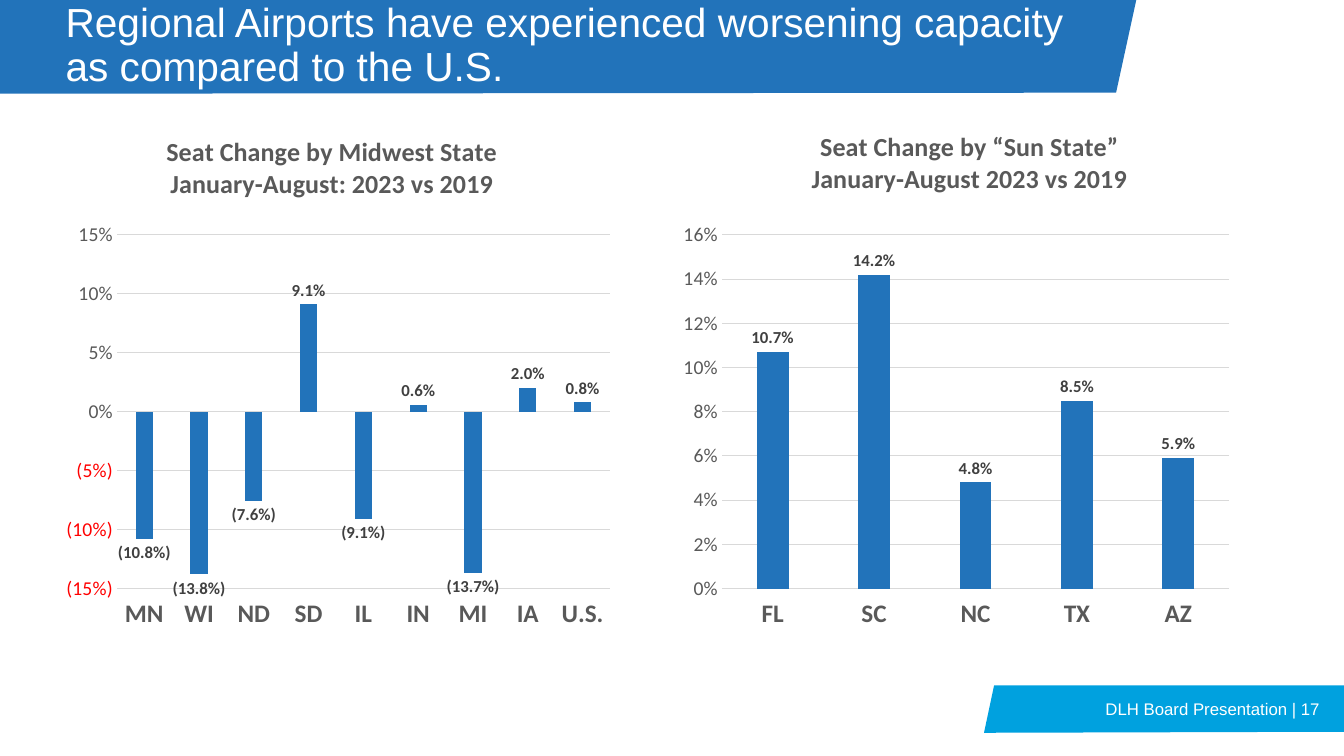
from dataclasses import dataclass

import lxml.etree
import pptx
import pptx.chart.chart
import pptx.chart.data
import pptx.dml.color
import pptx.enum.chart
import pptx.enum.text
import pptx.oxml.ns
import pptx.slide
import pptx.text.text
import pptx.util

Inches = pptx.util.Inches
Pt = pptx.util.Pt

COLOURS = {
    "banner": "2273BA",
    "footer": "00A1DF",
    "white": "FFFFFF",
    "grid": "D9D9D9",
    "axis": "595959",
    "label": "404040",
}
CHART_TOP, CHART_HEIGHT = 1.21, 5.13
PLOT_TOP, PLOT_HEIGHT = 2.33, 3.51


@dataclass
class Band:
    colour: str
    corners: list[tuple[float, float]]


@dataclass
class SeatChart:
    left: float
    width: float
    plot_left: float
    plot_width: float
    title_left: float
    title_top: float
    title_lines: list[str]
    seat_changes: dict[str, float]
    minimum: float
    maximum: float
    step: float
    label_format: str


BANDS = [
    Band("footer", [(9.86, 6.8), (13.33, 6.8), (13.33, 7.26), (9.76, 7.27)]),
    Band("banner", [(0, 0), (11.27, 0), (11.07, 0.92), (0, 0.93)]),
]
CHARTS = [
    SeatChart(
        0.55, 5.61, 1.16, 4.89, 1.62, 1.3,
        ["Seat Change by Midwest State", "January-August: 2023 vs 2019"],
        {"MN": -0.108, "WI": -0.138, "ND": -0.076, "SD": 0.091, "IL": -0.091,
         "IN": 0.006, "MI": -0.137, "IA": 0.02, "U.S.": 0.008},
        -0.15, 0.15, 0.05, r"0.0%;\(0.0%\)",
    ),
    SeatChart(
        6.67, 5.64, 7.16, 5.03, 8.02, 1.25,
        ["Seat Change by “Sun State”", "January-August 2023 vs 2019"],
        {"FL": 0.107, "SC": 0.142, "NC": 0.048, "TX": 0.085, "AZ": 0.059},
        0, 0.16, 0.02, "0.0%",
    ),
]


def rgb(name: str) -> pptx.dml.color.RGBColor:
    return pptx.dml.color.RGBColor.from_string(COLOURS[name])


def style_font(font: pptx.text.text.Font, face: str, size: float,
               colour: str, bold: bool = False) -> None:
    font.name = face
    font.size = Pt(size)
    font.bold = bold
    font.color.rgb = rgb(colour)


def add_band(slide: pptx.slide.Slide, band: Band) -> None:
    points = [(Inches(x), Inches(y)) for x, y in band.corners]
    builder = slide.shapes.build_freeform(*points[0])
    builder.add_line_segments(points[1:], close=True)
    shape = builder.convert_to_shape()
    shape.shadow.inherit = False
    shape.fill.solid()
    shape.fill.fore_color.rgb = rgb(band.colour)
    shape.line.fill.background()


def set_layout(parent: lxml.etree.ElementBase, index: int,
               settings: dict[str, str | float]) -> None:
    """Give a chart part a manual layout, as its child at the given index."""
    qn = pptx.oxml.ns.qn
    for old in parent.findall(qn("c:layout")):
        parent.remove(old)
    layout = parent.makeelement(qn("c:layout"))
    parent.insert(index, layout)
    manual = lxml.etree.SubElement(layout, qn("c:manualLayout"))
    for key, value in settings.items():
        lxml.etree.SubElement(manual, qn(f"c:{key}")).set("val", str(value))


def add_chart_title(chart: pptx.chart.chart.Chart, spec_chart: SeatChart) -> None:
    frame = chart.chart_title.text_frame
    for number, line in enumerate(spec_chart.title_lines):
        para = frame.add_paragraph() if number else frame.paragraphs[0]
        para.text = line
        style_font(para.font, "Calibri", 18.6, "axis", bold=True)
    chart.chart_title.include_in_layout = False


def format_axes(chart: pptx.chart.chart.Chart, seat_chart: SeatChart) -> None:
    states, percents = chart.category_axis, chart.value_axis
    for axis in (states, percents):
        axis.major_tick_mark = pptx.enum.chart.XL_TICK_MARK.NONE
        axis.minor_tick_mark = pptx.enum.chart.XL_TICK_MARK.NONE
    style_font(states.tick_labels.font, "Calibri", 18, "axis", bold=True)
    states.tick_label_position = pptx.enum.chart.XL_TICK_LABEL_POSITION.LOW
    style_font(percents.tick_labels.font, "Calibri", 14, "axis")
    percents.tick_labels.number_format = r"0%;[Red]\(0%\)"
    percents.tick_labels.number_format_is_linked = False
    percents.minimum_scale = seat_chart.minimum
    percents.maximum_scale = seat_chart.maximum
    percents.major_unit = seat_chart.step
    percents.format.line.fill.background()
    for line in (states.format.line, percents.major_gridlines.format.line):
        line.color.rgb = rgb("grid")
        line.width = Pt(0.75)


def format_columns(chart: pptx.chart.chart.Chart, label_format: str) -> None:
    plot = chart.plots[0]
    plot.gap_width = 219
    plot.overlap = -27
    plot.vary_by_categories = False
    series = plot.series[0]
    series.invert_if_negative = False
    series.format.fill.solid()
    series.format.fill.fore_color.rgb = rgb("banner")
    labels = series.data_labels
    labels.show_value = True
    labels.position = pptx.enum.chart.XL_LABEL_POSITION.OUTSIDE_END
    labels.number_format = label_format
    labels.number_format_is_linked = False
    style_font(labels.font, "Calibri", 12, "label", bold=True)


def add_seat_chart(slide: pptx.slide.Slide, seat_chart: SeatChart) -> None:
    data = pptx.chart.data.CategoryChartData()
    data.categories = list(seat_chart.seat_changes)
    data.add_series("Series 1", list(seat_chart.seat_changes.values()))
    chart = slide.shapes.add_chart(
        pptx.enum.chart.XL_CHART_TYPE.COLUMN_CLUSTERED,
        Inches(seat_chart.left), Inches(CHART_TOP),
        Inches(seat_chart.width), Inches(CHART_HEIGHT), data,
    ).chart
    chart.has_legend = False
    chart.font.name = "Calibri"
    chart.font.size = Pt(10)
    add_chart_title(chart, seat_chart)
    format_axes(chart, seat_chart)
    format_columns(chart, seat_chart.label_format)

    title = chart.chart_title.format and chart.element.find(".//" + pptx.oxml.ns.qn("c:title"))
    set_layout(title, 1, {
        "xMode": "edge", "yMode": "edge",
        "x": (seat_chart.title_left - seat_chart.left) / seat_chart.width,
        "y": (seat_chart.title_top - CHART_TOP) / CHART_HEIGHT,
    })
    plot_area = chart.element.find(".//" + pptx.oxml.ns.qn("c:plotArea"))
    set_layout(plot_area, 0, {
        "layoutTarget": "inner", "xMode": "edge", "yMode": "edge",
        "x": (seat_chart.plot_left - seat_chart.left) / seat_chart.width,
        "y": (PLOT_TOP - CHART_TOP) / CHART_HEIGHT,
        "w": seat_chart.plot_width / seat_chart.width,
        "h": PLOT_HEIGHT / CHART_HEIGHT,
    })


def place_title(slide: pptx.slide.Slide) -> None:
    title = slide.shapes.title
    title.left, title.top = Inches(0.55), Inches(0)
    title.width, title.height = Inches(10.31), Inches(0.92)
    frame = title.text_frame
    frame.text = "Regional Airports have experienced worsening capacity as compared to the U.S."
    frame.auto_size = pptx.enum.text.MSO_AUTO_SIZE.NONE
    frame.vertical_anchor = pptx.enum.text.MSO_ANCHOR.MIDDLE
    para = frame.paragraphs[0]
    para.alignment = pptx.enum.text.PP_ALIGN.LEFT
    para.line_spacing = 0.9
    style_font(para.font, "Arial", 29, "white")
    title.element.getparent().append(title.element)  # in front of the banner


def add_footer(slide: pptx.slide.Slide) -> None:
    box = slide.shapes.add_textbox(Inches(10.21), Inches(6.8), Inches(2.98), Inches(0.47))
    frame = box.text_frame
    frame.word_wrap = True
    frame.vertical_anchor = pptx.enum.text.MSO_ANCHOR.MIDDLE
    para = frame.paragraphs[0]
    para.text = "DLH Board Presentation | 17"
    para.alignment = pptx.enum.text.PP_ALIGN.RIGHT
    style_font(para.font, "Arial", 12, "white")


def main() -> None:
    deck = pptx.Presentation()
    deck.slide_width, deck.slide_height = Inches(13.33), Inches(7.5)
    slide = deck.slides.add_slide(deck.slide_layouts[5])
    for band in BANDS:
        add_band(slide, band)
    place_title(slide)
    for seat_chart in CHARTS:
        add_seat_chart(slide, seat_chart)
    add_footer(slide)
    deck.save("out.pptx")


if __name__ == "__main__":
    main()
